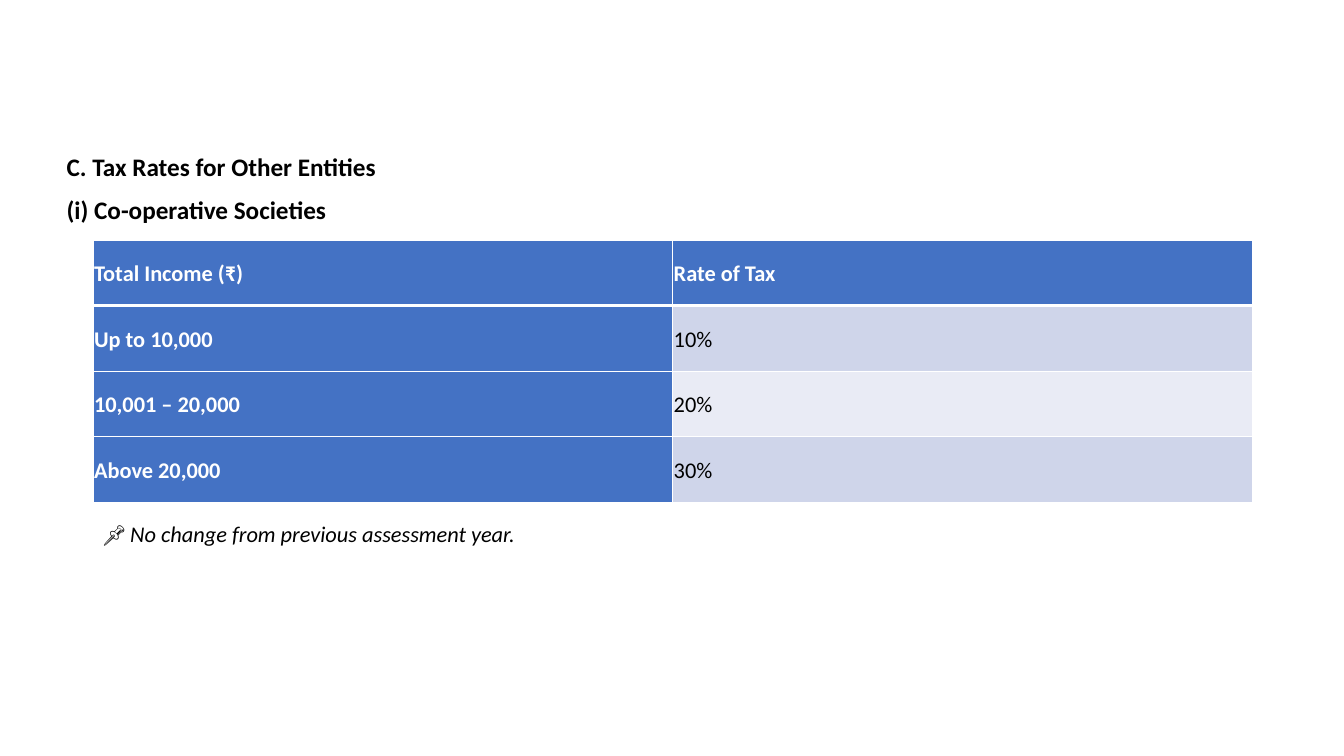
from dataclasses import dataclass

from lxml.etree import SubElement as Sub
from pptx import Presentation
from pptx.dml.color import RGBColor as Color
from pptx.enum.text import MSO_ANCHOR as Anchor, MSO_AUTO_SIZE as Fit
from pptx.oxml.ns import qn
from pptx.util import Pt


@dataclass(frozen=True)
class Theme:
    font: str = "Calibri"
    ink: str = "000000"
    white: str = "FFFFFF"
    blue: str = "4472C4"
    bands: tuple = ("CFD5EA", "E9EBF5")
    head: int = 18
    body: int = 16
    thin: int = 1
    thick: int = 3


class Deck:
    def __init__(self, theme):
        self.theme = theme
        self.file = Presentation()
        self.file.slide_width, self.file.slide_height = Pt(960), Pt(540)
        self.slide = self.file.slides.add_slide(self.file.slide_layouts[6])

    def run(self, para, text, size, color, bold=False, italic=False):
        font_run = para.add_run()
        font_run.text = text
        font = font_run.font
        font.name, font.size = self.theme.font, Pt(size)
        font.bold, font.italic = bold, italic
        font.color.rgb = Color.from_string(color)

    def space(self, para):
        para.line_spacing, para.space_after = 1.07, Pt(8)

    def box(self, left, top, width, height, anchor):
        frame = self.slide.shapes.add_textbox(
            Pt(left), Pt(top), Pt(width), Pt(height)).text_frame
        frame.word_wrap = True
        frame.auto_size = Fit.SHAPE_TO_FIT_TEXT
        frame.vertical_anchor = anchor
        return frame

    def heads(self, lines, *place):
        frame = self.box(*place, Anchor.TOP)
        for row, line in enumerate(lines):
            para = frame.add_paragraph() if row else frame.paragraphs[0]
            self.space(para)
            self.run(para, line, self.theme.head, self.theme.ink, bold=True)

    def note(self, icon, text, *place):
        para = self.box(*place, Anchor.MIDDLE).paragraphs[0]
        self.run(para, icon, self.theme.body, self.theme.ink)
        self.run(para, text, self.theme.body, self.theme.ink, italic=True)

    def edges(self, cell, row):
        props = cell._tc.get_or_add_tcPr()
        thick = {0: "lnB", 1: "lnT"}.get(row)
        for side in ("lnL", "lnR", "lnT", "lnB"):
            width = self.theme.thick if side == thick else self.theme.thin
            line = Sub(props, qn("a:" + side), w=str(Pt(width)))
            fill = Sub(line, qn("a:solidFill"))
            Sub(fill, qn("a:srgbClr"), val=self.theme.white)

    def cell(self, cell, text, row, col):
        theme = self.theme
        strong = row == 0 or col == 0
        self.edges(cell, row)
        cell.fill.solid()
        shade = theme.blue if strong else theme.bands[(row - 1) % 2]
        cell.fill.fore_color.rgb = Color.from_string(shade)
        cell.vertical_anchor = Anchor.MIDDLE
        cell.margin_left = cell.margin_right = Pt(0.75)
        cell.margin_top = cell.margin_bottom = Pt(0.75)
        para = cell.text_frame.paragraphs[0]
        self.space(para)
        self.run(para, text, theme.body,
                 theme.white if strong else theme.ink, bold=strong)

    def table(self, rows, left, top, width, height):
        grid = self.slide.shapes.add_table(
            len(rows), len(rows[0]),
            Pt(left), Pt(top), Pt(width), Pt(height)).table
        for row, texts in enumerate(rows):
            for col, text in enumerate(texts):
                self.cell(grid.cell(row, col), text, row, col)


def main():
    deck = Deck(Theme())
    deck.heads(["C. Tax Rates for Other Entities",
                "(i) Co-operative Societies"], 40.5, 103, 480, 61)
    deck.table([("Total Income (₹)", "Rate of Tax"),
                ("Up to 10,000", "10%"),
                ("10,001 – 20,000", "20%"),
                ("Above 20,000", "30%")], 66.5, 171.5, 828, 187.2)
    deck.note("📌 ", "No change from previous assessment year.",
              66.5, 368, 832, 26.6)
    deck.file.save("out.pptx")


if __name__ == "__main__":
    main()
